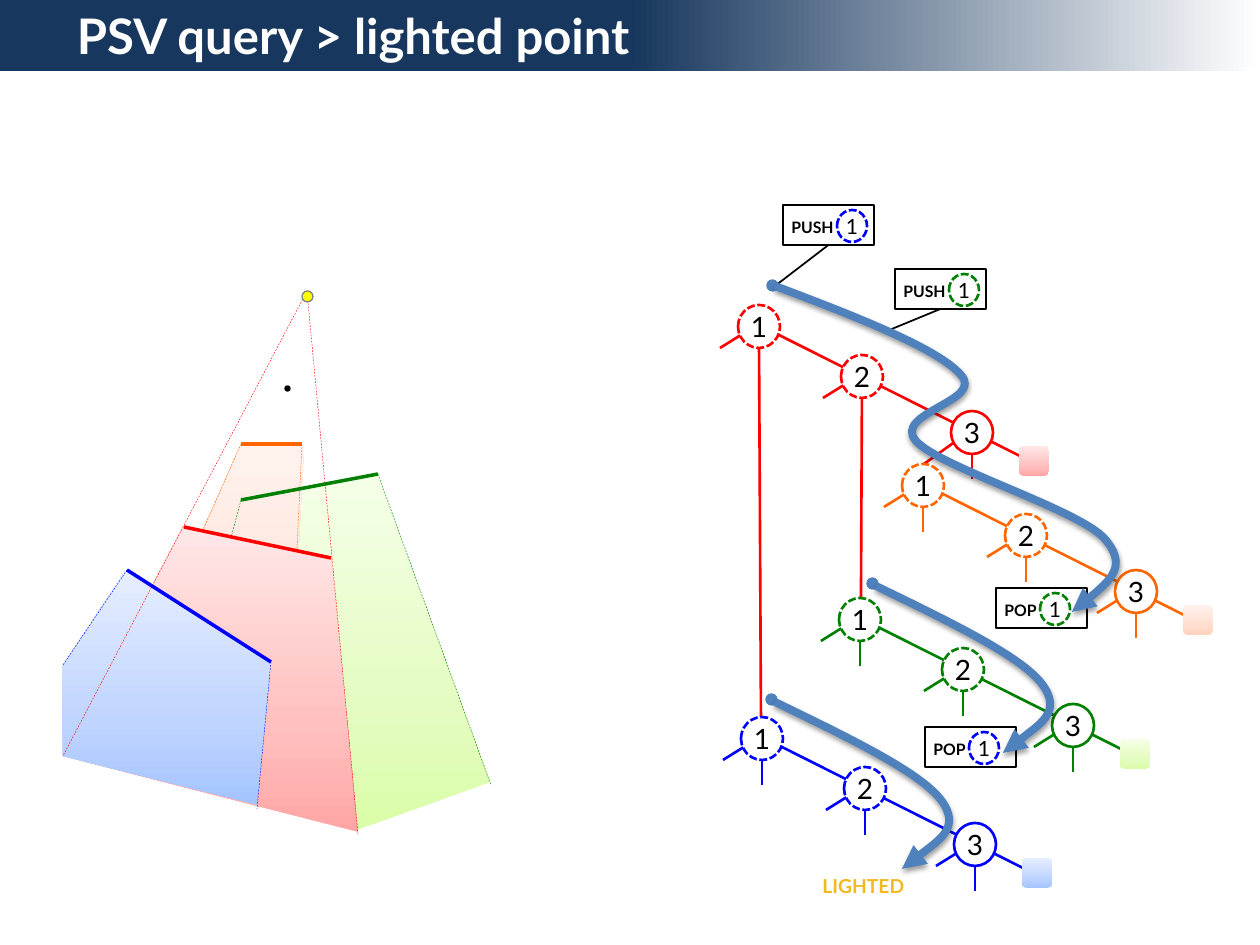
from copy import deepcopy

from lxml.etree import SubElement
from pptx import Presentation
from pptx.dml.color import RGBColor
from pptx.enum.dml import MSO_LINE
from pptx.enum.shapes import MSO_CONNECTOR, MSO_SHAPE
from pptx.enum.text import MSO_ANCHOR, PP_ALIGN
from pptx.oxml.ns import qn
from pptx.util import Inches, Pt

PX = 7257  # EMU per px, 126 px to the inch
COLORS = {
    "red": "FF0000", "orange": "FF6600", "green": "008000", "blue": "0000FF",
    "black": "000000", "white": "FFFFFF", "gray": "808080", "yellow": "FFFF00",
    "gold": "F2B921", "navy": "17375E", "steel": "4F81BD",
}
REGIONS = {  # gradient stops: position and colour, from bottom to top
    "red": [(0, "FFA6A5"), (0.35, "FFC0BF"), (1, "FFE7E7")],
    "orange": [(0, "FFD2BD"), (0.35, "FFDED0"), (1, "FFF2ED")],
    "green": [(0, "DAFDA7"), (0.35, "E4FCC2"), (1, "F5FFE7")],
    "blue": [(0, "A4C4FF"), (0.35, "BFD4FF"), (1, "E6EEFF")],
}


def style(item, fill=None, line=None, width=1.5, dash=None, angle=90):
    """Format a shape or connector; fill is a colour name or a list of gradient stops."""
    if line:
        item.line.color.rgb = RGBColor.from_string(COLORS[line])
        item.line.width = Pt(width)
        if dash:
            item.line.dash_style = dash
    else:
        item.line.fill.background()
    if not hasattr(item, "fill"):
        SubElement(item._element.spPr, qn("a:effectLst"))
        return
    item.shadow.inherit = False
    if fill is None:
        item.fill.background()
    elif isinstance(fill, str):
        item.fill.solid()
        item.fill.fore_color.rgb = RGBColor.from_string(COLORS[fill])
    else:
        item.fill.gradient()
        item.fill.gradient_angle = angle
        stop_list = item._element.spPr.find(".//" + qn("a:gsLst"))
        while len(stop_list) < len(fill):
            stop_list.append(deepcopy(stop_list[0]))
        for stop, (position, color) in zip(item.fill.gradient_stops, fill):
            stop.position = position
            stop.color.rgb = RGBColor.from_string(color)


def write(box, text, size, color="black", bold=False, align=PP_ALIGN.LEFT,
          anchor=MSO_ANCHOR.TOP, margins=None):
    """Put text in box; margins are left, top, right and bottom in px."""
    frame = box.text_frame
    frame.word_wrap = True
    frame.vertical_anchor = anchor
    if margins:
        (frame.margin_left, frame.margin_top,
         frame.margin_right, frame.margin_bottom) = [margin * PX for margin in margins]
    para = frame.paragraphs[0]
    para.alignment = align
    span = para.add_run()
    span.text = text
    span.font.name = "Lato"
    span.font.size = Pt(size)
    span.font.bold = bold
    span.font.color.rgb = RGBColor.from_string(COLORS[color])


deck = Presentation()
deck.slide_width, deck.slide_height = Inches(10), Inches(7.5)
page = deck.slides.add_slide(deck.slide_layouts[6])
shapes = page.shapes
centred = {"align": PP_ALIGN.CENTER, "anchor": MSO_ANCHOR.MIDDLE, "margins": (0, 0, 0, 0)}

# Search trees: three nodes each, with stubs that a red node may replace by a longer link
trees = [("red", 738, 305), ("orange", 902, 464), ("green", 839, 598), ("blue", 741, 717)]
node_steps = [(0, 0), (103, 50), (213, 106)]
long_links = {  # end of the downward link from each of these red nodes
    ("red", 1): (761, 717),
    ("red", 2): (861, 599),
}
for color, left, top in trees:
    links = [(left + 23, top + 21, left + 282, top + 151)]
    for number, (dx, dy) in enumerate(node_steps, 1):
        x, y = left + dx, top + dy
        down_end = long_links.get((color, number), (x + 21, y + 68))
        side_end = (924, 464) if (color, number) == ("red", 3) else (x - 18, y + 43)
        links += [(x + 21, y + 30, *down_end), (x + 19, y + 20, *side_end)]
    for ends in links:
        link = shapes.add_connector(MSO_CONNECTOR.STRAIGHT, *[v * PX for v in ends])
        style(link, line=color)
    for number, (dx, dy) in enumerate(node_steps, 1):
        node = shapes.add_shape(MSO_SHAPE.OVAL, (left + dx) * PX, (top + dy) * PX, 42 * PX, 43 * PX)
        style(node, "white", color, dash=MSO_LINE.SQUARE_DOT if number < 3 else None)
        write(node, str(number), 16, **centred)
    leaf = shapes.add_shape(MSO_SHAPE.ROUNDED_RECTANGLE,
                            (left + 281) * PX, (top + 141) * PX, 30 * PX, 30 * PX)
    style(leaf, REGIONS[color])

# Stack operations, with the point on the walk that a push belongs to
operations = [
    ("PUSH", "blue", 783, 205, 54, (775, 286)),
    ("PUSH", "green", 895, 269, 54, (887, 331)),
    ("POP", "blue", 925, 727, 44, None),
    ("POP", "green", 996, 588, 44, None),
]
for label, color, left, top, node_dx, target in operations:
    frame_box = shapes.add_shape(MSO_SHAPE.RECTANGLE, left * PX, top * PX, 91 * PX, 40 * PX)
    style(frame_box, line="black", width=1)
    label_box = shapes.add_textbox((left - 4) * PX, (top + 7) * PX, 100 * PX, 32 * PX)
    write(label_box, label, 9, bold=True)
    node = shapes.add_shape(MSO_SHAPE.OVAL, (left + node_dx) * PX, (top + 5) * PX, 30 * PX, 32 * PX)
    style(node, "white", color, dash=MSO_LINE.SQUARE_DOT)
    write(node, "1", 12, **centred)
    if target:
        x, y = target
        pointer = shapes.add_connector(MSO_CONNECTOR.STRAIGHT, x * PX, y * PX, x * PX, y * PX)
        pointer.end_connect(frame_box, 2)
        style(pointer, line="black", width=1)

verdict = shapes.add_textbox(810 * PX, 868 * PX, 113 * PX, 36 * PX)
write(verdict, "LIGHTED", 11, color="gold", bold=True)

# Walks through the trees: a start point, then three Bezier points per curve
short_walk = [(775, 702), (847, 737), (920, 772), (941, 800), (963, 829), (905, 867), (902, 869)]
walks = [
    short_walk,
    [(x + 101, y - 116) for x, y in short_walk],
    [(775, 286), (857, 317), (939, 349), (961, 375), (985, 401), (892, 413), (916, 441),
     (939, 467), (1077, 509), (1104, 538), (1129, 566), (1101, 590), (1072, 612)],
]
for x, y in [(767, 280), (867, 578), (766, 694)]:
    dot = shapes.add_shape(MSO_SHAPE.OVAL, x * PX, y * PX, 11 * PX, 11 * PX)
    style(dot, "steel", "steel", width=0.75)
for start, *points in walks:
    builder = shapes.build_freeform(*start, scale=PX)
    builder.add_line_segments(points, close=False)
    walk = builder.convert_to_shape()
    style(walk, line="steel", width=4.5)
    outline = walk._element.find(".//" + qn("a:path"))
    segments = outline.findall(qn("a:lnTo"))
    for first in range(0, len(segments), 3):
        curve = SubElement(outline, qn("a:cubicBezTo"))
        for segment in segments[first:first + 3]:
            curve.append(segment[0])
            outline.remove(segment)
    SubElement(walk.line._get_or_add_ln(), qn("a:tailEnd"), type="triangle")
    effects = walk._element.spPr.find(qn("a:effectLst"))
    shadow = SubElement(effects, qn("a:outerShdw"), blurRad="40000", dist="20000",
                        dir="5400000", rotWithShape="0")
    shadow_color = SubElement(shadow, qn("a:srgbClr"), val=COLORS["black"])
    SubElement(shadow_color, qn("a:alpha"), val="38000")

# Shadow regions cast by the four segments
regions = [
    ("green", [(241, 500), (156, 779), (357, 830), (490, 782), (377, 475)]),
    ("orange", [(241, 444), (304, 444), (285, 811), (98, 765)]),
    ("red", [(183, 527), (331, 558), (358, 832), (63, 756)]),
    ("blue", [(126, 570), (271, 662), (257, 805), (63, 756), (62, 667)]),
]
for color, (start, *points) in regions:
    builder = shapes.build_freeform(*start, scale=PX)
    builder.add_line_segments(points)
    style(builder.convert_to_shape(), REGIONS[color])

rays = [
    ("red", 307, 291, 358, 834), ("red", 307, 291, 63, 756),
    ("blue", 127, 570, 63, 665), ("blue", 271, 662, 257, 809),
    ("green", 241, 500, 231, 538), ("green", 378, 474, 491, 785),
    ("orange", 241, 444, 203, 530), ("orange", 302, 444, 297, 549),
]
segments = [
    ("red", 184, 527, 331, 558), ("blue", 127, 570, 271, 662),
    ("green", 241, 500, 378, 474), ("orange", 241, 444, 302, 444),
]
for lines, width, dash in [(rays, 0.25, MSO_LINE.DASH), (segments, 2, None)]:
    for color, *ends in lines:
        line = shapes.add_connector(MSO_CONNECTOR.STRAIGHT, *[v * PX for v in ends])
        style(line, line=color, width=width, dash=dash)

for x, y, size, fill, border in [(302, 291, 11, "yellow", "gray"), (285, 386, 5, "black", "black")]:
    point = shapes.add_shape(MSO_SHAPE.OVAL, x * PX, y * PX, size * PX, size * PX)
    style(point, fill, border, width=0.75)

title = shapes.add_shape(MSO_SHAPE.RECTANGLE, 0, -1 * PX, 1260 * PX, 72 * PX)
style(title, [(0.5, COLORS["navy"]), (1, COLORS["white"])], angle=0)
write(title, "PSV query > lighted point", 28, color="white", bold=True,
      anchor=MSO_ANCHOR.MIDDLE, margins=(77, 6, 13, 6))

deck.save("out.pptx")
